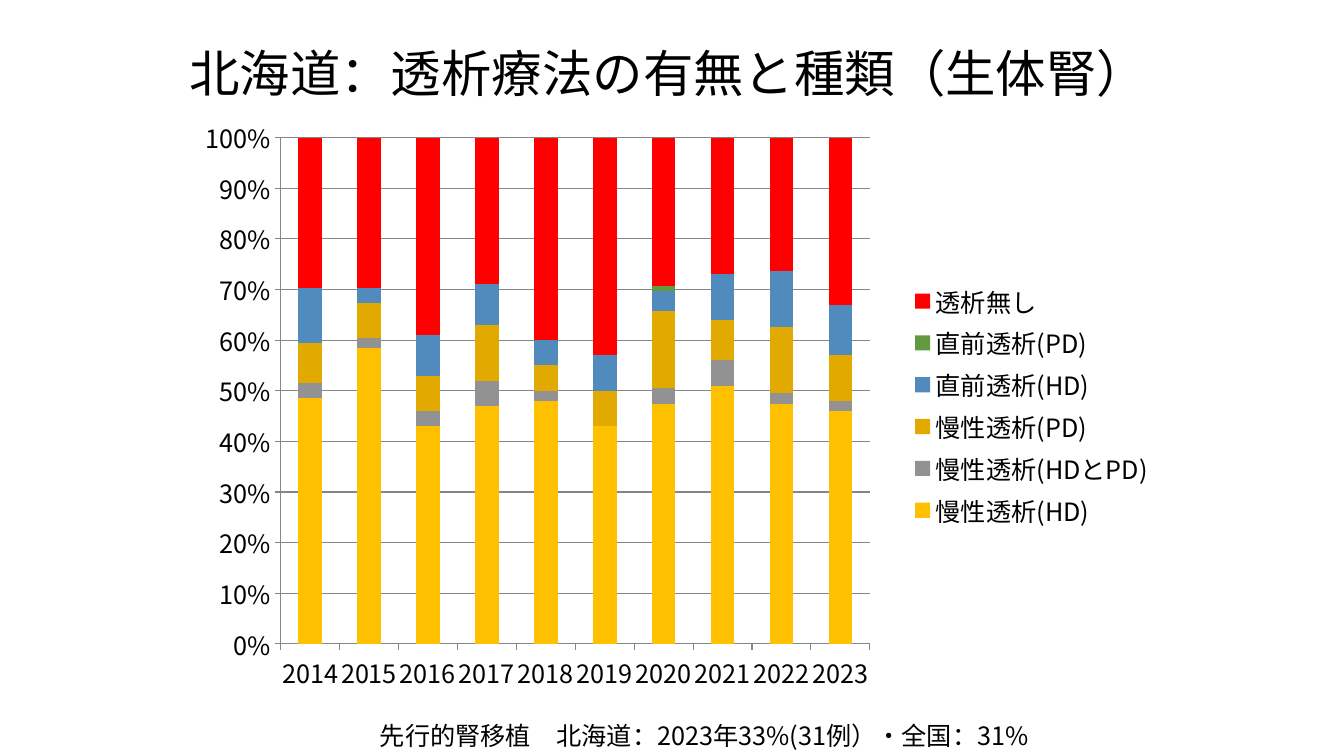
import pptx
import pptx.chart.data
import pptx.dml.color
import pptx.enum.chart
import pptx.enum.text
import pptx.oxml
import pptx.oxml.ns
import pptx.util

Inches = pptx.util.Inches
FONT = "Noto Sans CJK JP"
COLORS = {
    "text": "000000",
    "line": "868686",
    "chronic_hd": "FFC000",
    "chronic_both": "929292",
    "chronic_pd": "E2AA00",
    "recent_hd": "518ABD",
    "recent_pd": "639A3F",
    "none": "FF0000",
}
TITLE = "北海道：透析療法の有無と種類（生体腎）"
NOTE = "先行的腎移植　北海道：2023年33%(31例）・全国：31%"
YEARS = [str(year) for year in range(2014, 2024)]
SERIES = [
    ("慢性透析(HD)", "chronic_hd", (49, 59, 43, 47, 48, 43, 47, 51, 47, 46)),
    ("慢性透析(HDとPD)", "chronic_both", (3, 2, 3, 5, 2, 0, 3, 5, 2, 2)),
    ("慢性透析(PD)", "chronic_pd", (8, 7, 7, 11, 5, 7, 15, 8, 13, 9)),
    ("直前透析(HD)", "recent_hd", (11, 3, 8, 8, 5, 7, 4, 9, 11, 10)),
    ("直前透析(PD)", "recent_pd", (0, 0, 0, 0, 0, 0, 1, 0, 0, 0)),
    ("透析無し", "none", (30, 30, 39, 29, 40, 43, 29, 27, 26, 33)),
]
TITLE_BOX = (1.78, 0.13, 9.76, 1.25)
NOTE_BOX = (3.67, 7.1, 7.22, 0.4)
CHART_BOX = (1.81, 1.07, 9.74, 5.91)
PLOT_LAYOUT = {"x": 0.1, "y": 0.05, "w": 0.6, "h": 0.85}


def color(name):
    """Return the named colour."""
    return pptx.dml.color.RGBColor.from_string(COLORS[name])


def set_east_asian_font(properties):
    """Give text properties the East Asian typeface."""
    latin = properties.find(pptx.oxml.ns.qn("a:latin"))
    east_asian = pptx.oxml.parse_xml(
        f'<a:ea {pptx.oxml.ns.nsdecls("a")} typeface="{FONT}"/>'
    )
    latin.addnext(east_asian)


def style_font(font, size):
    """Apply the typeface, size and text colour."""
    font.name = FONT
    font.size = pptx.util.Pt(size)
    font.color.rgb = color("text")


def add_text(slide, box, text, size, anchor, spacing):
    """Add a one-line text box."""
    shape = slide.shapes.add_textbox(*map(Inches, box))
    frame = shape.text_frame
    frame.word_wrap = True
    frame.vertical_anchor = anchor
    paragraph = frame.paragraphs[0]
    paragraph.line_spacing = spacing
    run = paragraph.add_run()
    run.text = text
    style_font(run.font, size)
    set_east_asian_font(run.font._element if hasattr(run.font, "_element") else run._r.rPr)


def set_plot_layout(chart):
    """Fix the inner plot area as fractions of the chart."""
    plot_area = chart._chartSpace.chart.plotArea
    for layout in plot_area.findall(pptx.oxml.ns.qn("c:layout")):
        plot_area.remove(layout)
    modes = "".join(f'<c:{key}Mode val="edge"/>' for key in "xy")
    sizes = "".join(f'<c:{key} val="{value}"/>' for key, value in PLOT_LAYOUT.items())
    plot_area.insert(0, pptx.oxml.parse_xml(
        f'<c:layout {pptx.oxml.ns.nsdecls("c")}><c:manualLayout>'
        f'<c:layoutTarget val="inner"/>{modes}{sizes}</c:manualLayout></c:layout>'
    ))


def add_dialysis_chart(slide):
    """Add the stacked percentage chart of dialysis types by year."""
    data = pptx.chart.data.CategoryChartData()
    data.categories = YEARS
    for name, _, values in SERIES:
        data.add_series(name, values)
    chart = slide.shapes.add_chart(
        pptx.enum.chart.XL_CHART_TYPE.COLUMN_STACKED_100,
        *map(Inches, CHART_BOX), data,
    ).chart
    style_font(chart.font, 18)
    for properties in chart._chartSpace.xpath("c:txPr//a:defRPr"):
        set_east_asian_font(properties)
    chart.has_title = False
    chart.has_legend = True
    chart.legend.position = pptx.enum.chart.XL_LEGEND_POSITION.RIGHT
    chart.legend.include_in_layout = False

    plot = chart.plots[0]
    plot.gap_width = 150
    plot.overlap = 100
    plot.vary_by_categories = False
    for series, (_, color_name, _) in zip(plot.series, SERIES):
        series.format.fill.solid()
        series.format.fill.fore_color.rgb = color(color_name)

    value_axis = chart.value_axis
    value_axis.minimum_scale = 0
    value_axis.maximum_scale = 1
    value_axis.major_unit = 0.1
    value_axis.has_major_gridlines = True
    value_axis.tick_labels.number_format = "0%"
    value_axis.tick_labels.number_format_is_linked = False
    for axis in (chart.category_axis, value_axis):
        axis.major_tick_mark = pptx.enum.chart.XL_TICK_MARK.OUTSIDE
    for part in (chart.category_axis, value_axis, value_axis.major_gridlines):
        part.format.line.color.rgb = color("line")
        part.format.line.width = pptx.util.Pt(0.75)
    set_plot_layout(chart)


def main():
    """Build and save the slide."""
    presentation = pptx.Presentation()
    presentation.slide_width = Inches(13.33)
    presentation.slide_height = Inches(7.5)
    slide = presentation.slides.add_slide(presentation.slide_layouts[6])
    anchors = pptx.enum.text.MSO_ANCHOR
    add_text(slide, TITLE_BOX, TITLE, 36, anchors.MIDDLE, 0.9)
    add_text(slide, NOTE_BOX, NOTE, 18, anchors.TOP, 1.0)
    add_dialysis_chart(slide)
    presentation.save("out.pptx")


if __name__ == "__main__":
    main()
